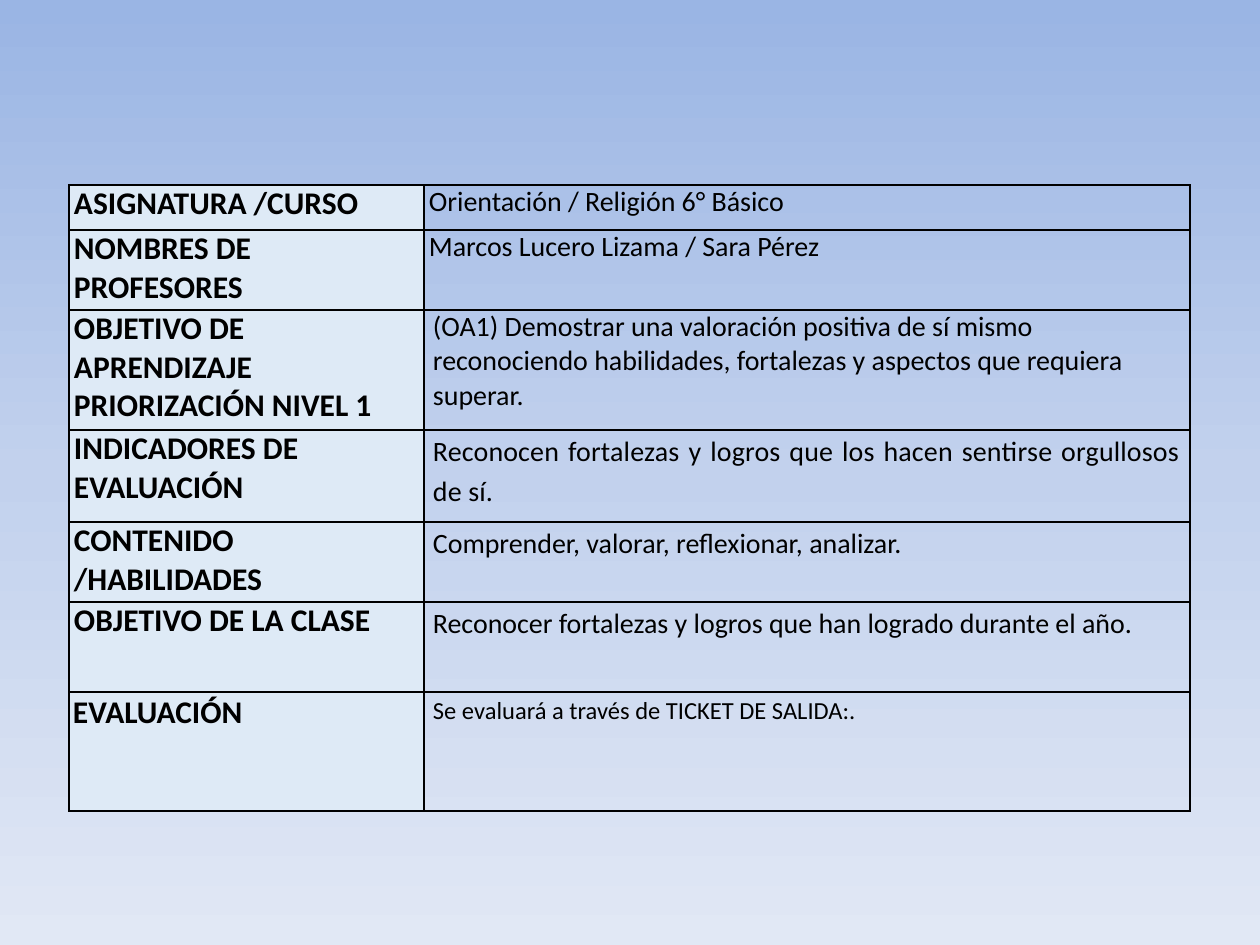
from lxml.etree import SubElement
from pptx import Presentation
from pptx.dml.color import RGBColor
from pptx.enum.text import PP_ALIGN as Align
from pptx.oxml.ns import qn
from pptx.util import Pt

PX = 914400 / 126
FONT = "Calibri"
COLORS = {
    "sky": "9AB5E4",
    "mist": "C2D1ED",
    "pale": "E1E8F5",
    "label": "DEEAF6",
    "ink": "000000",
}
COLUMNS = (355, 766)
JUSTIFY = {"align": Align.JUSTIFY}
LOOSE = {"align": Align.JUSTIFY, "line": 1.15}
ROWS = [
    (45, "ASIGNATURA /CURSO", "Orientación / Religión 6° Básico", {"inset": 5, **JUSTIFY}),
    (80, "NOMBRES DE PROFESORES", "Marcos Lucero Lizama / Sara Pérez", {"inset": 5, **JUSTIFY}),
    (120, "OBJETIVO DE APRENDIZAJE PRIORIZACIÓN NIVEL 1",
     "(OA1) Demostrar una valoración positiva de sí mismo reconociendo "
     "habilidades, fortalezas y aspectos que requiera superar.", {}),
    (92, "INDICADORES DE EVALUACIÓN",
     "Reconocen fortalezas y logros que los hacen sentirse orgullosos de sí.",
     {"after": 10, "tracking": 10, **LOOSE}),
    (80, "CONTENIDO /HABILIDADES", "Comprender, valorar, reflexionar, analizar.", LOOSE),
    (90, "OBJETIVO DE LA CLASE",
     "Reconocer fortalezas y logros que han logrado durante el año.", LOOSE),
    (119, "EVALUACIÓN", "Se evaluará a través de TICKET DE SALIDA:.", {"size": 14, **LOOSE}),
]


def px(n):
    return round(n * PX)


def rgb(name):
    return RGBColor.from_string(COLORS[name])


def paint_background(s):
    fill = s.background.fill
    fill.gradient()
    fill.gradient_angle = 270
    stops = next(s.element.iter(qn("a:gsLst")))
    for stop in list(stops):
        stops.remove(stop)
    for pos, name in ((0, "sky"), (50, "mist"), (100, "pale")):
        stop = SubElement(stops, qn("a:gs"), pos=str(pos * 1000))
        SubElement(stop, qn("a:srgbClr"), val=COLORS[name])


def draw_borders(cell):
    tc_pr = cell._tc.get_or_add_tcPr()
    for i, side in enumerate(("lnL", "lnR", "lnT", "lnB")):
        line = tc_pr.makeelement(qn(f"a:{side}"), {"w": str(Pt(1))})
        tc_pr.insert(i, line)
        solid = SubElement(line, qn("a:solidFill"))
        SubElement(solid, qn("a:srgbClr"), val=COLORS["ink"])


def write_cell(cell, text, size=16, bold=False, inset=9, inset_y=0,
               align=Align.LEFT, line=None, after=None, tracking=None):
    cell.margin_left = cell.margin_right = px(inset)
    cell.margin_top = cell.margin_bottom = px(inset_y)
    p = cell.text_frame.paragraphs[0]
    p.alignment = align
    if line:
        p.line_spacing = line
    if after:
        p.space_after = Pt(after)
    r = p.add_run()
    r.text = text
    r.font.name = FONT
    r.font.size = Pt(size)
    r.font.bold = bold
    r.font.color.rgb = rgb("ink")
    if tracking:
        r.font._element.set("spc", str(tracking))
    draw_borders(cell)


def add_plan_table(s, x, y):
    height = sum(row[0] for row in ROWS)
    table = s.shapes.add_table(len(ROWS), len(COLUMNS), px(x), px(y),
                               px(sum(COLUMNS)), px(height)).table
    table.first_row = table.horz_banding = False
    for column, width in zip(table.columns, COLUMNS):
        column.width = px(width)
    for i, (row_height, label, text, style) in enumerate(ROWS):
        table.rows[i].height = px(row_height)
        head, body = table.cell(i, 0), table.cell(i, 1)
        head.fill.solid()
        head.fill.fore_color.rgb = rgb("label")
        body.fill.background()
        last = i == len(ROWS) - 1
        write_cell(head, label, size=18, bold=True,
                   inset=4 if last else 5, inset_y=2 if last else 0)
        write_cell(body, text, **style)


def main():
    prs = Presentation()
    prs.slide_width, prs.slide_height = px(1260), px(945)
    s = prs.slides.add_slide(prs.slide_layouts[6])
    paint_background(s)
    add_plan_table(s, 69, 185)
    prs.save("out.pptx")


if __name__ == "__main__":
    main()
